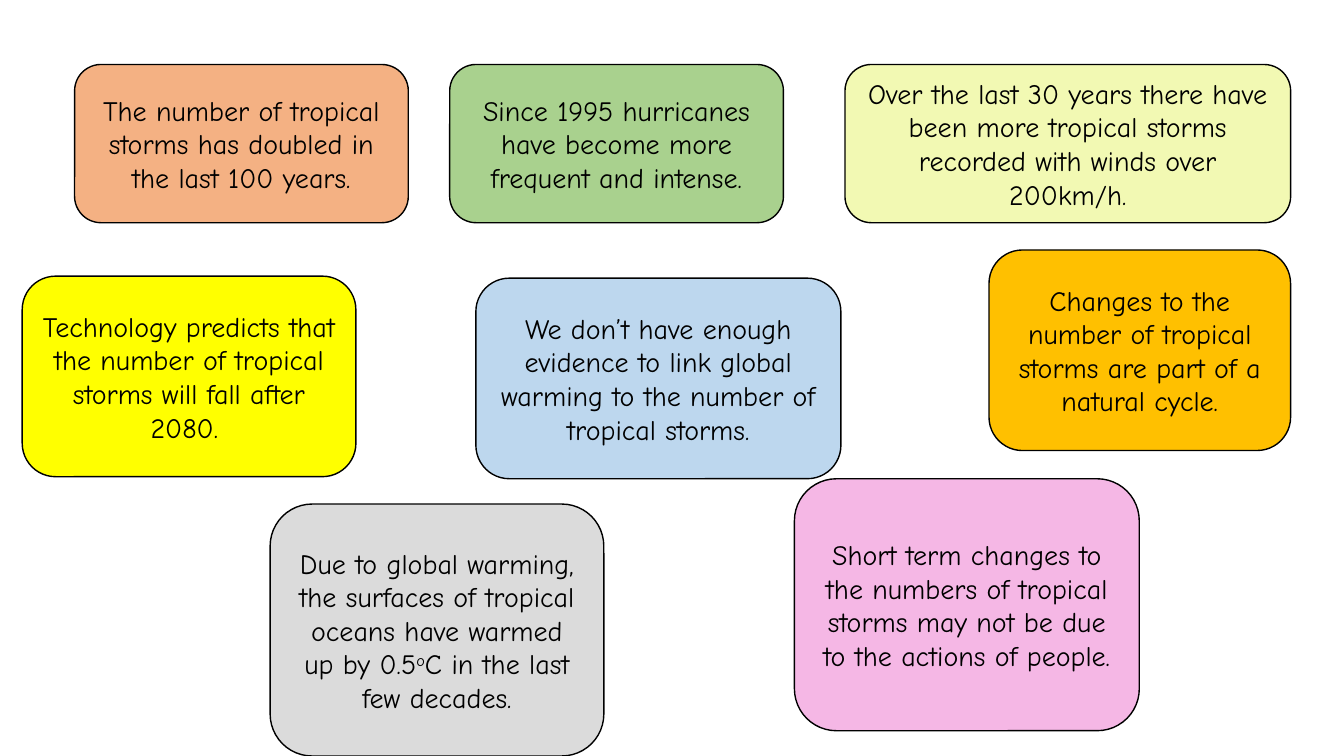
import pptx
import pptx.dml.color
import pptx.enum.shapes
import pptx.enum.text
import pptx.util

RGBColor = pptx.dml.color.RGBColor
BLACK = RGBColor(0x00, 0x00, 0x00)
ORANGE = RGBColor(0xF4, 0xB1, 0x83)
GREEN = RGBColor(0xA9, 0xD1, 0x8E)
LIME = RGBColor(0xF2, 0xF9, 0xB3)
YELLOW = RGBColor(0xFF, 0xFF, 0x00)
BLUE = RGBColor(0xBD, 0xD7, 0xEE)
AMBER = RGBColor(0xFF, 0xC0, 0x00)
GREY = RGBColor(0xDB, 0xDB, 0xDB)
PINK = RGBColor(0xF5, 0xB7, 0xE5)

deck = pptx.Presentation()
deck.slide_width = pptx.util.Inches(13.33)
deck.slide_height = pptx.util.Inches(7.5)
slide = deck.slides.add_slide(deck.slide_layouts[6])

# Percent of the slide's width and height
ONE_PERCENT_X = deck.slide_width / 100
ONE_PERCENT_Y = deck.slide_height / 100
CARD_WIDTH = 24.83
RIGHT_EDGE = 96.03

# Each row: card height, then (left, top, width, fill, statement);
# text between ^ marks is superscript
rows = [
    (20.93, [
        (5.55, 8.53, CARD_WIDTH, ORANGE,
         "The number of tropical storms has doubled in the last 100 years."),
        (33.46, 8.53, CARD_WIDTH, GREEN,
         "Since 1995 hurricanes have become more frequent and intense."),
        (62.87, 8.53, RIGHT_EDGE - 62.87, LIME,
         "Over the last 30 years there have been more tropical storms "
         "recorded with winds over 200km/h."),
    ]),
    (26.53, [
        (1.65, 36.53, CARD_WIDTH, YELLOW,
         "Technology predicts that the number of tropical storms will fall "
         "after 2080. "),
        (35.41, 36.8, 27.16, BLUE,
         "We don’t have enough evidence to link global warming to the number "
         "of tropical storms."),
        (73.59, 33.07, RIGHT_EDGE - 73.59, AMBER,
         "Changes to the number of tropical storms are part of a natural "
         "cycle."),
    ]),
    (33.33, [
        (20.1, 66.67, CARD_WIDTH, GREY,
         "Due to global warming, the surfaces of tropical oceans have warmed "
         "up by 0.5^o^C in the last few decades."),
        (59.11, 63.33, 25.66, PINK,
         "Short term changes to the numbers of tropical storms may not be due "
         "to the actions of people."),
    ]),
]

for height, cards in rows:
    for left, top, width, fill, statement in cards:
        card = slide.shapes.add_shape(
            pptx.enum.shapes.MSO_SHAPE.ROUNDED_RECTANGLE,
            round(left * ONE_PERCENT_X), round(top * ONE_PERCENT_Y),
            round(width * ONE_PERCENT_X), round(height * ONE_PERCENT_Y))
        card.shadow.inherit = False
        card.fill.solid()
        card.fill.fore_color.rgb = fill
        card.line.color.rgb = BLACK
        card.line.width = pptx.util.Pt(1)
        card.text_frame.word_wrap = True
        card.text_frame.vertical_anchor = pptx.enum.text.MSO_ANCHOR.MIDDLE
        paragraph = card.text_frame.paragraphs[0]
        paragraph.alignment = pptx.enum.text.PP_ALIGN.CENTER
        for index, part in enumerate(statement.split("^")):
            run = paragraph.add_run()
            run.text = part
            run.font.name = "Comic Neue"
            run.font.size = pptx.util.Pt(20)
            run.font.color.rgb = BLACK
            if index % 2:
                run._r.get_or_add_rPr().set("baseline", "30000")

deck.save("out.pptx")
